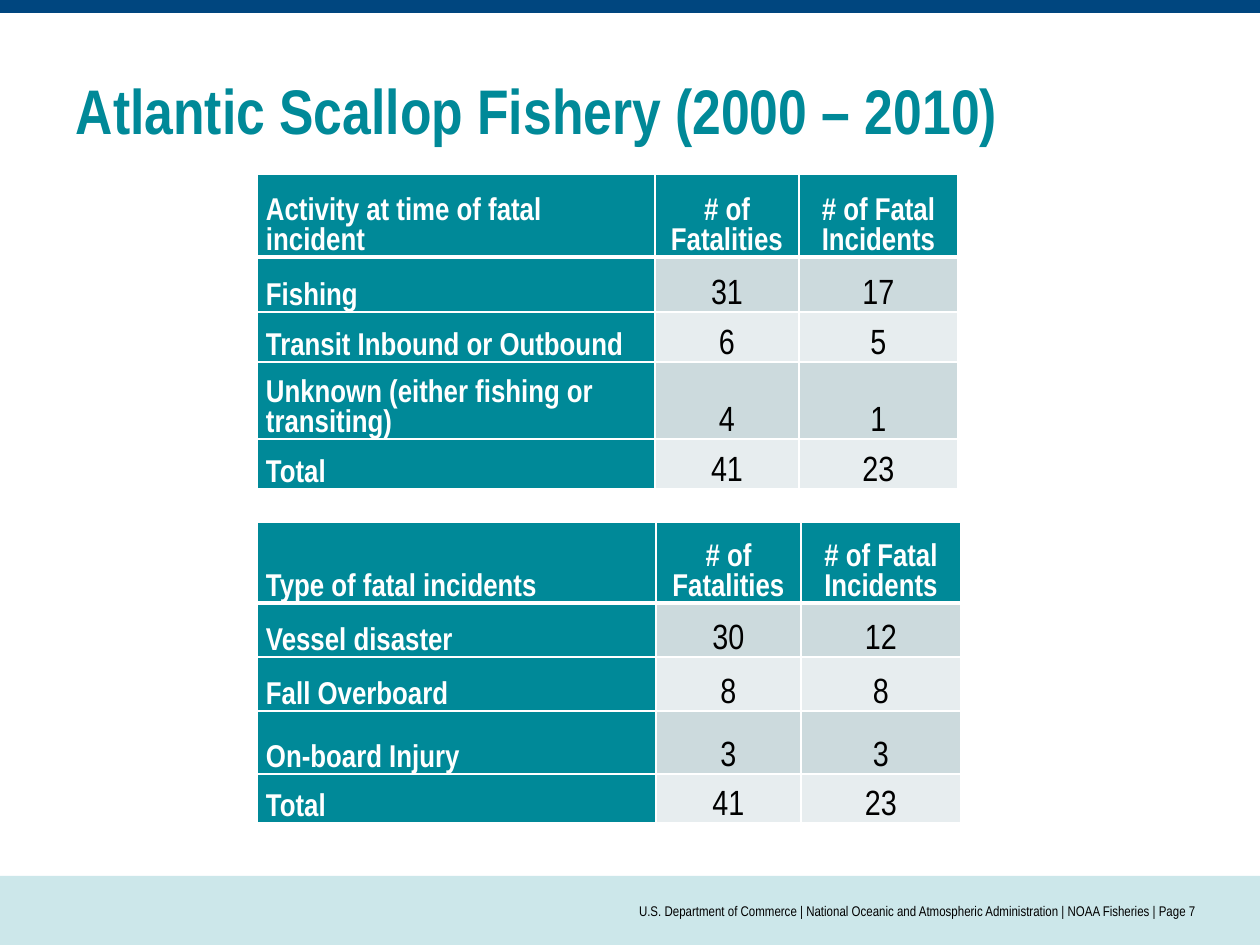
"""Build the Atlantic scallop fishery fatalities slide."""
from lxml.etree import SubElement
from pptx import Presentation
from pptx.dml.color import RGBColor
from pptx.enum.shapes import MSO_SHAPE
from pptx.enum.text import MSO_ANCHOR, PP_ALIGN
from pptx.oxml.ns import qn
from pptx.util import Emu, Pt

PX = 914400 // 126
FONT = "Arial Narrow"
TEAL = RGBColor(0x00, 0x89, 0x98)
NAVY = RGBColor(0x00, 0x46, 0x7F)
PALE_TEAL = RGBColor(0xCC, 0xE7, 0xEA)
BANDS = (RGBColor(0xCC, 0xDA, 0xDD), RGBColor(0xE7, 0xED, 0xEF))
WHITE = RGBColor(0xFF, 0xFF, 0xFF)
BLACK = RGBColor(0x00, 0x00, 0x00)

COUNT_HEADS = ("# of Fatalities", "# of Fatal Incidents")
ACTIVITIES = [
    ("Activity at time of fatal incident", *COUNT_HEADS),
    ("Fishing", "31", "17"),
    ("Transit Inbound or Outbound", "6", "5"),
    ("Unknown (either fishing or transiting)", "4", "1"),
    ("Total", "41", "23"),
]
INCIDENT_TYPES = [
    ("Type of fatal incidents", *COUNT_HEADS),
    ("Vessel disaster", "30", "12"),
    ("Fall Overboard", "8", "8"),
    ("On-board Injury", "3", "3"),
    ("Total", "41", "23"),
]
FOOTER = "\u2002|\u2002".replace("\u2002", " ").join((
    "U.S. Department of Commerce",
    "National Oceanic and Atmospheric Administration",
    "NOAA Fisheries",
    "Page 7",
))


def px(n):
    return Emu(n * PX)


def write(tf, text, size, color, bold=False, align=PP_ALIGN.LEFT):
    p = tf.paragraphs[0]
    p.alignment = align
    r = p.add_run()
    r.text = text
    r.font.name = FONT
    r.font.size = Pt(size)
    r.font.bold = bold
    r.font.color.rgb = color


def set_borders(cell, color, **widths):
    tc_pr = cell._tc.get_or_add_tcPr()
    for i, side in enumerate("LRTB"):
        ln = SubElement(tc_pr, qn(f"a:ln{side}"), w=str(Pt(widths.get(side, 1))))
        fill = SubElement(ln, qn("a:solidFill"))
        SubElement(fill, qn("a:srgbClr"), val=str(color))
        tc_pr.insert(i, ln)


class Deck:
    def __init__(self, width, height):
        self.prs = Presentation()
        self.prs.slide_width, self.prs.slide_height = px(width), px(height)
        self.s = self.prs.slides.add_slide(self.prs.slide_layouts[6])

    def band(self, x, y, w, h, color):
        sp = self.s.shapes.add_shape(MSO_SHAPE.RECTANGLE, px(x), px(y), px(w), px(h))
        sp.shadow.inherit = False
        sp.fill.solid()
        sp.fill.fore_color.rgb = color
        sp.line.fill.background()

    def text(self, x, y, w, h, text, inset=0, **style):
        tf = self.s.shapes.add_textbox(px(x), px(y), px(w), px(h)).text_frame
        tf.word_wrap = True
        tf.vertical_anchor = MSO_ANCHOR.MIDDLE
        tf.margin_left = tf.margin_right = px(inset)
        write(tf, text, **style)

    def table(self, x, y, col_widths, row_heights, data):
        frame = self.s.shapes.add_table(
            len(row_heights), len(col_widths), px(x), px(y),
            px(sum(col_widths)), px(sum(row_heights)))
        table = frame.table
        for col, width in zip(table.columns, col_widths):
            col.width = px(width)
        for row, height in zip(table.rows, row_heights):
            row.height = px(height)
        for i, values in enumerate(data):
            for j, value in enumerate(values):
                self.cell(table.cell(i, j), i, j, value)

    def cell(self, cell, i, j, value):
        heading = i == 0 or j == 0
        cell.vertical_anchor = MSO_ANCHOR.BOTTOM
        cell.margin_left = cell.margin_right = px(9)
        cell.margin_top = cell.margin_bottom = 0
        cell.fill.solid()
        cell.fill.fore_color.rgb = TEAL if heading else BANDS[(i - 1) % 2]
        set_borders(cell, WHITE, T=3 if i == 1 else 1, B=3 if i == 0 else 1)
        write(cell.text_frame, value, size=18 if heading else 20,
              color=WHITE if heading else BLACK, bold=heading,
              align=PP_ALIGN.CENTER if j else PP_ALIGN.LEFT)


def main():
    deck = Deck(1260, 945)
    deck.band(0, 876, 1260, 69, PALE_TEAL)
    deck.band(0, 0, 1260, 13, NAVY)
    deck.text(63, 63, 1134, 93, "Atlantic Scallop Fishery (2000 – 2010)",
              inset=13, size=36, color=TEAL, bold=True)
    deck.table(257, 174, (398, 144, 159), (83, 55, 50, 77, 50), ACTIVITIES)
    deck.text(315, 876, 882, 69, FOOTER, size=8, color=BLACK, align=PP_ALIGN.RIGHT)
    deck.table(257, 522, (399, 145, 160), (81, 54, 54, 63, 49), INCIDENT_TYPES)
    deck.prs.save("out.pptx")


if __name__ == "__main__":
    main()
